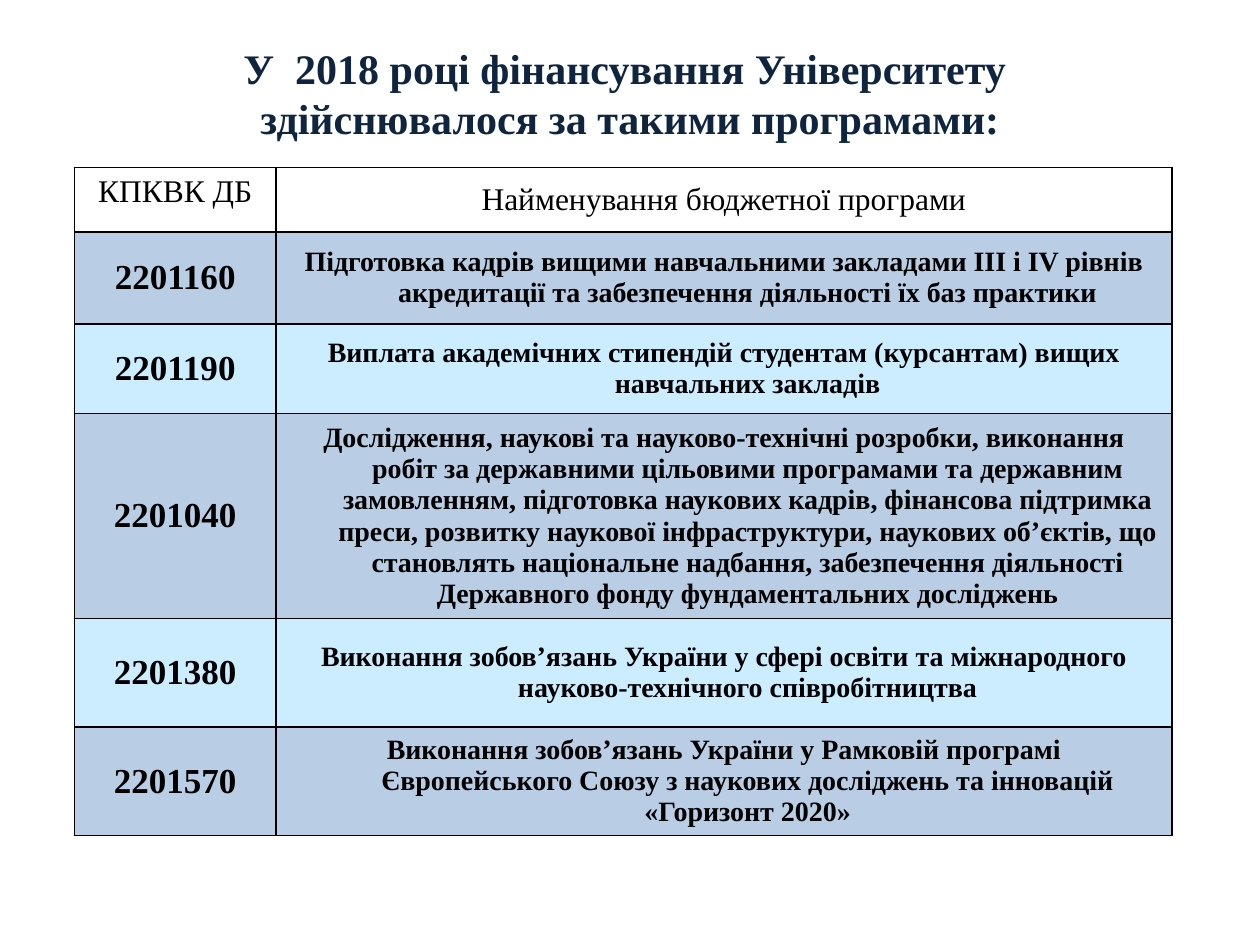
from dataclasses import dataclass

from lxml import etree
from pptx import Presentation
from pptx import util as u
from pptx.dml.color import RGBColor
from pptx.enum import text
from pptx.oxml import ns


@dataclass(frozen=True)
class Theme:
    font: str = "Times New Roman"
    title_color: str = "0F243E"
    ink: str = "000000"
    header_fill: str = "FFFFFF"
    bands: tuple = ("B9CDE5", "CCECFF")
    title_size: int = 24
    header_size: int = 18
    code_size: int = 20
    name_size: int = 16
    border: int = 1
    hanging: int = 27


class SlideBuilder:
    """Draws styled elements on the current slide."""

    def __init__(self, prs, theme):
        self.theme = theme
        self.s = prs.slides.add_slide(prs.slide_layouts[5])

    def add_run(self, p, content, size, color, bold):
        r = p.add_run()
        r.text = content
        r.font.name = self.theme.font
        r.font.size = u.Pt(size)
        r.font.bold = bold
        r.font.color.rgb = RGBColor.from_string(color)

    def title(self, lines, left, top, width, height):
        sp = self.s.shapes.title
        sp.left, sp.top, sp.width, sp.height = map(u.Pt, (left, top, width, height))
        tf = sp.text_frame
        tf.word_wrap = True
        tf.vertical_anchor = text.MSO_ANCHOR.MIDDLE
        p = tf.paragraphs[0]
        p.alignment = text.PP_ALIGN.CENTER
        for i, line in enumerate(lines):
            if i:
                p.add_line_break()
            self.add_run(p, line, self.theme.title_size, self.theme.title_color, True)

    def border(self, cell):
        tcPr = cell._tc.get_or_add_tcPr()
        for i, side in enumerate(("a:lnL", "a:lnR", "a:lnT", "a:lnB")):
            ln = etree.Element(ns.qn(side), w=str(u.Pt(self.theme.border)))
            fill = etree.SubElement(ln, ns.qn("a:solidFill"))
            etree.SubElement(fill, ns.qn("a:srgbClr"), val=self.theme.ink)
            tcPr.insert(i, ln)

    def cell(self, cell, content, size, bold, fill, anchor=text.MSO_ANCHOR.MIDDLE):
        cell.fill.solid()
        cell.fill.fore_color.rgb = RGBColor.from_string(fill)
        cell.vertical_anchor = anchor
        self.border(cell)
        p = cell.text_frame.paragraphs[0]
        p.alignment = text.PP_ALIGN.CENTER
        pPr = p._p.get_or_add_pPr()
        pPr.set("marL", str(u.Pt(self.theme.hanging)))
        pPr.set("indent", str(-u.Pt(self.theme.hanging)))
        self.add_run(p, content, size, self.theme.ink, bold)

    def table(self, header, rows, left, top, widths, heights):
        t = self.theme
        frame = self.s.shapes.add_table(
            len(heights), len(widths),
            *map(u.Pt, (left, top, sum(widths), sum(heights))))
        table = frame.table
        for col, width in zip(table.columns, widths):
            col.width = u.Pt(width)
        for row, height in zip(table.rows, heights):
            row.height = u.Pt(height)
        anchors = (text.MSO_ANCHOR.TOP, text.MSO_ANCHOR.MIDDLE)
        for c, (label, anchor) in enumerate(zip(header, anchors)):
            self.cell(table.cell(0, c), label, t.header_size, False, t.header_fill, anchor)
        for i, values in enumerate(rows):
            fill = t.bands[i % len(t.bands)]
            for c, (value, size) in enumerate(zip(values, (t.code_size, t.name_size))):
                self.cell(table.cell(i + 1, c), value, size, True, fill)


TITLE = ("У  2018 році фінансування Університету ", "здійснювалося за такими програмами:")
HEADER = ("КПКВК ДБ", "Найменування бюджетної програми")
PROGRAMS = (
    ("2201160", "Підготовка кадрів вищими навчальними закладами ІІІ і IV рівнів "
                "акредитації та забезпечення діяльності їх баз практики"),
    ("2201190", "Виплата академічних стипендій студентам (курсантам) вищих "
                "навчальних закладів"),
    ("2201040", "Дослідження, наукові та науково-технічні розробки, виконання робіт "
                "за державними цільовими програмами та державним замовленням, "
                "підготовка наукових кадрів, фінансова підтримка преси, розвитку "
                "наукової інфраструктури, наукових об’єктів, що становлять "
                "національне надбання, забезпечення діяльності Державного фонду "
                "фундаментальних досліджень"),
    ("2201380", "Виконання зобов’язань України у сфері освіти та міжнародного "
                "науково-технічного співробітництва"),
    ("2201570", "Виконання зобов’язань України у Рамковій програмі Європейського "
                "Союзу з наукових досліджень та інновацій «Горизонт 2020»"),
)


def main():
    prs = Presentation()
    prs.slide_width, prs.slide_height = u.Pt(720), u.Pt(540)
    slide = SlideBuilder(prs, Theme())
    slide.title(TITLE, 36, 21.6, 648, 62.6)
    slide.table(HEADER, PROGRAMS, 42.5, 95.8, (115.2, 512), (36.7, 52.6, 51.1, 117.4, 62, 62))
    prs.save("out.pptx")


if __name__ == "__main__":
    main()
